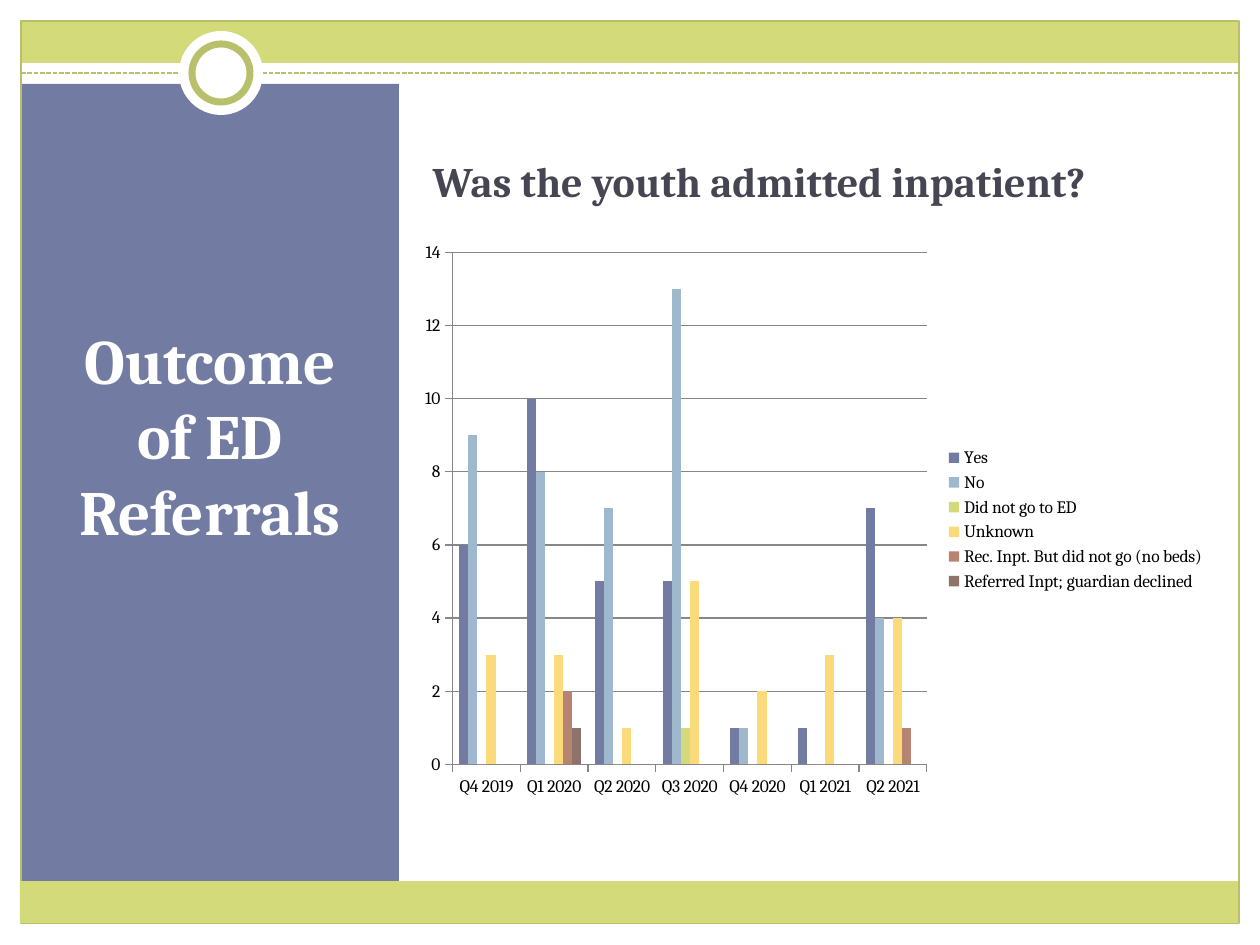
from lxml.etree import SubElement
from pptx import Presentation
from pptx.chart.data import CategoryChartData
from pptx.dml.color import RGBColor
from pptx.enum.chart import XL_CHART_TYPE, XL_LEGEND_POSITION, XL_TICK_MARK
from pptx.enum.dml import MSO_LINE
from pptx.enum.shapes import MSO_CONNECTOR, MSO_SHAPE
from pptx.enum.text import MSO_ANCHOR, MSO_AUTO_SIZE, PP_ALIGN
from pptx.oxml.ns import qn
from pptx.util import Inches, Pt

PX_PER_INCH = 126
FONT = "Cambria"
WHITE, LIME, OLIVE, SLATE = "FFFFFF", "D2DA7A", "B9C06C", "727CA3"
INK, BLACK, GRAY = "464653", "000000", "878787"

BANDS = [
    ((1239, 0, 21, 945), WHITE),
    ((0, 0, 1260, 21), WHITE),
    ((0, 0, 21, 945), WHITE),
    ((21, 21, 1218, 42), LIME),
    ((21, 84, 378, 809), SLATE),
]
QUARTERS = ["Q4 2019", "Q1 2020", "Q2 2020", "Q3 2020", "Q4 2020", "Q1 2021", "Q2 2021"]
OUTCOMES = [
    ("Yes", (6, 10, 5, 5, 1, 1, 7), SLATE),
    ("No", (9, 8, 7, 13, 1, 0, 4), "9FB8CD"),
    ("Did not go to ED", (0, 0, 0, 1, 0, 0, 0), LIME),
    ("Unknown", (3, 3, 1, 5, 2, 3, 4), "FADA7A"),
    ("Rec. Inpt. But did not go (no beds)", (0, 2, 0, 0, 0, 0, 1), "B88472"),
    ("Referred Inpt; guardian declined", (0, 1, 0, 0, 0, 0, 0), "8E736A"),
]


def px(length):
    return Inches(length / PX_PER_INCH)


def color(hex_code):
    return RGBColor.from_string(hex_code)


def paint(fill, hex_code):
    fill.solid()
    fill.fore_color.rgb = color(hex_code)


def add_panel(slide, box, fill=None, line=None, width=0.75, kind=MSO_SHAPE.RECTANGLE):
    panel = slide.shapes.add_shape(kind, *map(px, box))
    panel.shadow.inherit = False
    if fill:
        paint(panel.fill, fill)
    else:
        panel.fill.background()
    if line:
        panel.line.color.rgb = color(line)
        panel.line.width = Pt(width)
    else:
        panel.line.fill.background()


def add_dashed_rule(slide, left, right, y):
    rule = slide.shapes.add_connector(MSO_CONNECTOR.STRAIGHT, px(left), px(y), px(right), px(y))
    rule.line.color.rgb = color(OLIVE)
    rule.line.width = Pt(0.9)
    rule.line.dash_style = MSO_LINE.SQUARE_DOT
    SubElement(rule.element.spPr, qn("a:effectLst"))


def write_text(holder, text, size, hex_code, align=PP_ALIGN.LEFT, after=0):
    frame = holder.text_frame
    frame.word_wrap = True
    frame.auto_size = MSO_AUTO_SIZE.NONE
    frame.vertical_anchor = MSO_ANCHOR.TOP
    paragraph = frame.paragraphs[0]
    paragraph.alignment = align
    paragraph.space_before = Pt(0)
    paragraph.space_after = Pt(after)
    run = paragraph.add_run()
    run.text = text
    run.font.name = FONT
    run.font.size = Pt(size)
    run.font.bold = True
    run.font.color.rgb = color(hex_code)


def place_title(slide, box, text):
    title = slide.shapes.title
    title.left, title.top, title.width, title.height = map(px, box)
    write_text(title, text, 24, INK)


def add_outcome_chart(slide, box):
    admissions = CategoryChartData()
    admissions.categories = QUARTERS
    for name, counts, _ in OUTCOMES:
        admissions.add_series(name, counts)
    chart = slide.shapes.add_chart(
        XL_CHART_TYPE.COLUMN_CLUSTERED, *map(px, box), admissions
    ).chart
    chart.has_title = False
    chart.font.name = FONT
    chart.font.size = Pt(10)
    chart.font.color.rgb = color(BLACK)
    chart.has_legend = True
    chart.legend.position = XL_LEGEND_POSITION.RIGHT
    chart.legend.include_in_layout = False

    columns = chart.plots[0]
    columns.gap_width = 150
    columns.overlap = 0
    columns.vary_by_categories = False
    for series, (_, _, hex_code) in zip(columns.series, OUTCOMES):
        paint(series.format.fill, hex_code)
        series.invert_if_negative = False

    counts_axis = chart.value_axis
    counts_axis.minimum_scale = 0
    counts_axis.maximum_scale = 14
    counts_axis.major_unit = 2
    counts_axis.has_major_gridlines = True
    for axis in (chart.category_axis, counts_axis):
        axis.major_tick_mark = XL_TICK_MARK.OUTSIDE
        axis.minor_tick_mark = XL_TICK_MARK.NONE
    for part in (chart.category_axis, counts_axis, counts_axis.major_gridlines):
        part.format.line.color.rgb = color(GRAY)
        part.format.line.width = Pt(0.75)


def main():
    deck = Presentation()
    deck.slide_width, deck.slide_height = px(1260), px(945)
    slide = deck.slides.add_slide(deck.slide_layouts[5])

    add_dashed_rule(slide, 21, 1239, 73)
    for box, fill in BANDS:
        add_panel(slide, box, fill)
    add_panel(slide, (21, 21, 1218, 902), line=OLIVE)
    add_panel(slide, (179, 31, 84, 84), WHITE, kind=MSO_SHAPE.OVAL)
    add_panel(slide, (192, 44, 58, 58), WHITE, OLIVE, 4, MSO_SHAPE.OVAL)
    add_panel(slide, (20, 881, 1218, 42), LIME)

    sidebar = slide.shapes.add_textbox(*map(px, (42, 315, 336, 273)))
    write_text(sidebar, "Outcome of ED Referrals", 36, WHITE, PP_ALIGN.CENTER, after=10)
    add_outcome_chart(slide, (409, 231, 809, 577))
    place_title(slide, (420, 149, 809, 84), "Was the youth admitted inpatient?")

    deck.save("out.pptx")


if __name__ == "__main__":
    main()
